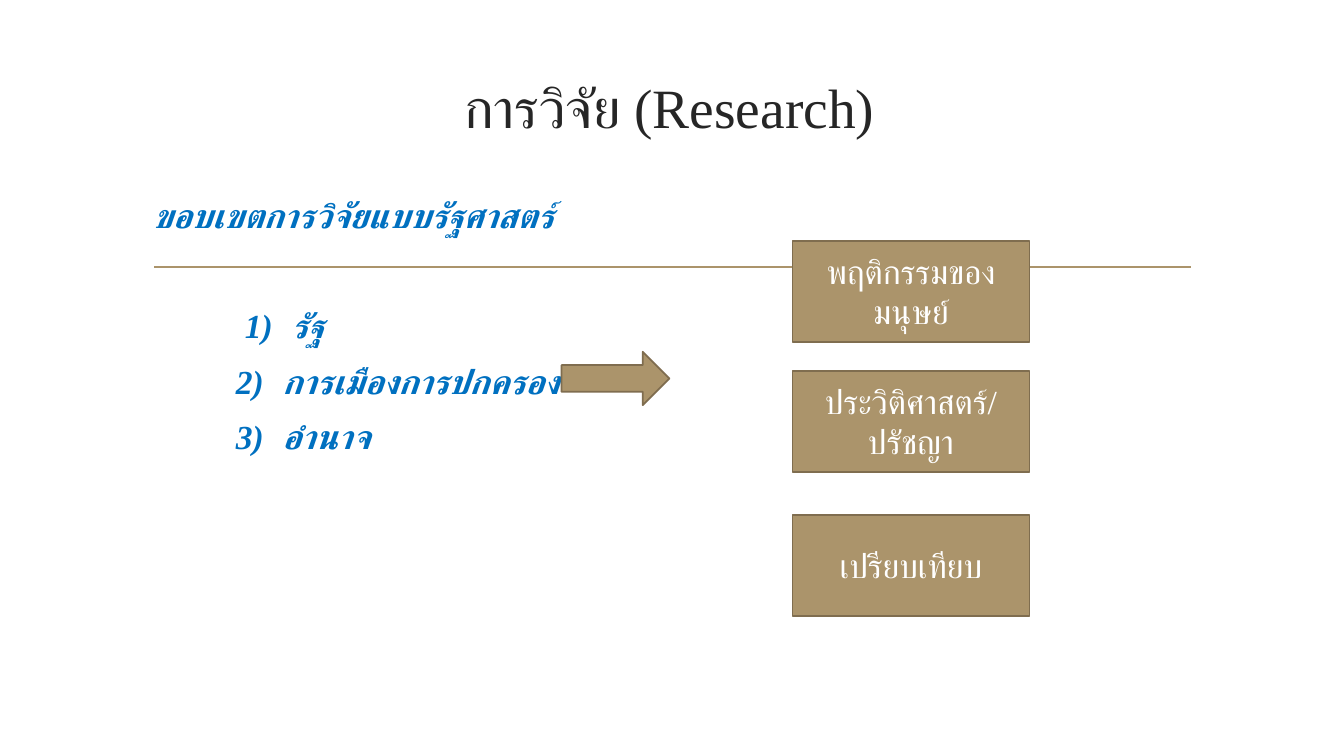
from dataclasses import dataclass

from lxml import etree
from pptx import Presentation
from pptx import util as u
from pptx.dml.color import RGBColor
from pptx.enum import shapes, text
from pptx.oxml import ns

FONT = "Times New Roman"
TAN, BROWN, BLUE, WHITE, INK = "AB946B", "7F6D4F", "0070C0", "FFFFFF", "262626"
LINE_WIDTH = u.Pt(1.25)
HANGING = 0.46


@dataclass
class Scope:
    label: str
    margin: float
    before: float


@dataclass
class Approach:
    label: str
    top: float


SCOPES = [
    Scope("1)\tรัฐ", 1.37, 44.4),
    Scope("2)\tการเมืองการปกครอง", 1.28, 4.8),
    Scope("3)\tอำนาจ", 1.28, 4.8),
]
APPROACHES = [
    Approach("พฤติกรรมของมนุษย์", 2.39),
    Approach("ประวิติศาสตร์/ปรัชญา", 3.68),
    Approach("เปรียบเทียบ", 5.11),
]


def color(value: str) -> RGBColor:
    return RGBColor.from_string(value)


def write(paragraph, content: str, *, size: float = 24, fill: str = WHITE,
          emphasis: bool = False, align=text.PP_ALIGN.LEFT,
          before: float = 0, after: float = 0) -> None:
    paragraph.alignment = align
    paragraph.space_before = u.Pt(before)
    paragraph.space_after = u.Pt(after)
    run = paragraph.add_run()
    run.text = content
    run.font.name = FONT
    run.font.size = u.Pt(size)
    run.font.bold = run.font.italic = emphasis
    run.font.color.rgb = color(fill)
    etree.SubElement(run.font._element, ns.qn("a:cs"), typeface=FONT)


def add_frame(slide, left: float, top: float, width: float, height: float):
    frame = slide.shapes.add_textbox(*map(u.Inches, (left, top, width, height))).text_frame
    frame.word_wrap = True
    return frame


def add_block(slide, kind, left: float, top: float, width: float, height: float):
    block = slide.shapes.add_shape(kind, *map(u.Inches, (left, top, width, height)))
    block.shadow.inherit = False
    block.fill.solid()
    block.fill.fore_color.rgb = color(TAN)
    block.line.color.rgb = color(BROWN)
    block.line.width = LINE_WIDTH
    return block


def add_divider(slide, left: float, right: float, top: float) -> None:
    divider = slide.shapes.add_connector(
        shapes.MSO_CONNECTOR.STRAIGHT, *map(u.Inches, (left, top, right, top)))
    divider.line.color.rgb = color(TAN)
    divider.line.width = LINE_WIDTH
    etree.SubElement(divider._element.spPr, ns.qn("a:effectLst"))


def add_scope(frame, scope: Scope) -> None:
    paragraph = frame.add_paragraph()
    properties = paragraph._p.get_or_add_pPr()
    properties.set("marL", str(u.Inches(scope.margin)))
    properties.set("indent", str(u.Inches(-HANGING)))
    write(paragraph, scope.label, fill=BLUE, emphasis=True, before=scope.before, after=6)


def add_approach(slide, approach: Approach) -> None:
    block = add_block(slide, shapes.MSO_SHAPE.RECTANGLE, 7.86, approach.top, 2.35, 1)
    frame = block.text_frame
    frame.word_wrap = True
    frame.vertical_anchor = text.MSO_ANCHOR.MIDDLE
    write(frame.paragraphs[0], approach.label, align=text.PP_ALIGN.CENTER)


def main() -> None:
    deck = Presentation()
    deck.slide_width, deck.slide_height = u.Inches(13.33), u.Inches(7.5)
    slide = deck.slides.add_slide(deck.slide_layouts[6])

    add_divider(slide, 1.53, 11.81, 2.65)

    title = add_frame(slide, 1.39, 0.68, 10.5, 0.75)
    title.vertical_anchor = text.MSO_ANCHOR.MIDDLE
    write(title.paragraphs[0], "การวิจัย (Research)", size=39.6, fill=INK,
          align=text.PP_ALIGN.CENTER)

    body = add_frame(slide, 1.42, 1.88, 10.5, 5.1)
    write(body.paragraphs[0], "ขอบเขตการวิจัยแบบรัฐศาสตร์", fill=BLUE,
          emphasis=True, after=6)
    for scope in SCOPES:
        add_scope(body, scope)

    add_block(slide, shapes.MSO_SHAPE.RIGHT_ARROW, 5.57, 3.49, 1.07, 0.53)
    for approach in APPROACHES:
        add_approach(slide, approach)

    deck.save("out.pptx")


if __name__ == "__main__":
    main()
